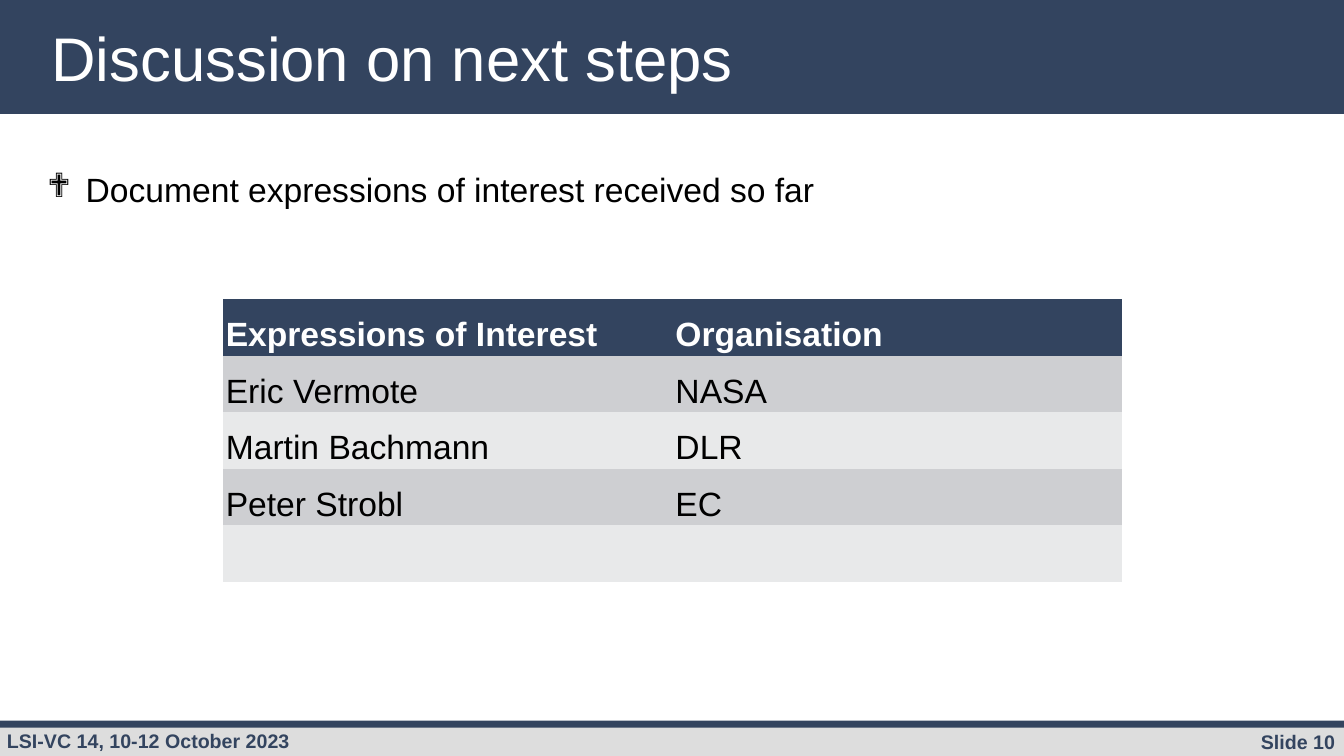
"""Build the slide listing expressions of interest."""
from dataclasses import dataclass

from lxml import etree
from pptx import Presentation
from pptx.dml.color import RGBColor as RGB
from pptx.enum.shapes import MSO_SHAPE as SHAPE
from pptx.enum.text import MSO_ANCHOR as ANCHOR, MSO_AUTO_SIZE as AUTO, PP_ALIGN as ALIGN
from pptx.oxml.ns import qn
from pptx.util import Inches, Pt


@dataclass(frozen=True)
class Theme:
    """Colours, font and type sizes of the slide."""
    font: str = "Arial"
    navy: str = "33445F"
    grey: str = "DDDDDD"
    white: str = "FFFFFF"
    black: str = "000000"
    bands: tuple = ("CECFD2", "E8E9EA")
    title: int = 44
    body: int = 24
    footer: int = 14


THEME = Theme()
NO_STYLE = "{2D5ABB26-0587-4C30-8999-92F81FD0307C}"
INTERESTS = [
    ("Expressions of Interest", "Organisation"),
    ("Eric Vermote", "NASA"),
    ("Martin Bachmann", "DLR"),
    ("Peter Strobl", "EC"),
    ("", ""),
]


def place(sp, left, top, width, height):
    """Move and size a shape in inches."""
    sp.left, sp.top = Inches(left), Inches(top)
    sp.width, sp.height = Inches(width), Inches(height)


def style(p, size, color, bold=False, align=ALIGN.LEFT):
    """Format a paragraph and its runs."""
    p.alignment = align
    for r in p.runs:
        r.font.name, r.font.size, r.font.bold = THEME.font, Pt(size), bold
        r.font.color.rgb = RGB.from_string(color)


def add_bar(s, top, height, color):
    """Add a full-width bar."""
    sp = s.shapes.add_shape(SHAPE.RECTANGLE, 0, Inches(top), Inches(13.33), Inches(height))
    sp.shadow.inherit = False
    sp.fill.solid()
    sp.fill.fore_color.rgb = RGB.from_string(color)
    sp.line.fill.background()


def add_footer(s, text, left, top, width, align):
    """Add a bold footer label."""
    sp = s.shapes.add_textbox(Inches(left), Inches(top), Inches(width), Inches(0.34))
    tf = sp.text_frame
    tf.word_wrap = True
    tf.text = text
    style(tf.paragraphs[0], THEME.footer, THEME.navy, True, align)


def fill_title(s, text):
    """Fill the title and bring it in front of the bars."""
    sp = s.shapes.title
    place(sp, 0.41, 0.19, 10.76, 0.85)
    tf = sp.text_frame
    tf.text = text
    tf.auto_size, tf.vertical_anchor = AUTO.NONE, ANCHOR.MIDDLE
    p = tf.paragraphs[0]
    p.line_spacing = 0.9
    style(p, THEME.title, THEME.white)
    sp._element.getparent().append(sp._element)


def fill_body(s, text):
    """Fill the body with one diamond-bulleted line."""
    sp = s.placeholders[1]
    place(sp, 0.37, 1.63, 7.88, 0.91)
    tf = sp.text_frame
    tf.text = text
    tf.auto_size, tf.vertical_anchor, tf.word_wrap = AUTO.NONE, ANCHOR.TOP, False
    p = tf.paragraphs[0]
    p.space_before = Pt(0)
    pPr = p._p.get_or_add_pPr()
    pPr.set("marL", str(Inches(0.38)))
    pPr.set("indent", str(Inches(-0.38)))
    etree.SubElement(pPr, qn("a:buFont")).set("typeface", "Wingdings")
    etree.SubElement(pPr, qn("a:buChar")).set("char", "❖")
    style(p, THEME.body, THEME.black)


def fill_cell(cell, text, fill, color, bold):
    """Fill and format one table cell."""
    cell.text = text
    cell.margin_left = cell.margin_right = Inches(0.03)
    cell.margin_top = cell.margin_bottom = Inches(0.02)
    cell.vertical_anchor = ANCHOR.BOTTOM
    cell.fill.solid()
    cell.fill.fore_color.rgb = RGB.from_string(fill)
    style(cell.text_frame.paragraphs[0], THEME.body, color, bold)


def add_interest_table(s, rows):
    """Add the table with a dark header and alternating bands."""
    frame = s.shapes.add_table(len(rows), len(rows[0]), Inches(2.21), Inches(2.97),
                               Inches(8.92), Inches(0.56 * len(rows)))
    table = frame.table
    table._tbl.tblPr.find(qn("a:tableStyleId")).text = NO_STYLE
    for i, row in enumerate(rows):
        header = i == 0
        fill = THEME.navy if header else THEME.bands[(i - 1) % 2]
        color = THEME.white if header else THEME.black
        for j, text in enumerate(row):
            fill_cell(table.cell(i, j), text, fill, color, header)


def main():
    """Build and save the slide."""
    prs = Presentation()
    prs.slide_width, prs.slide_height = Inches(13.33), Inches(7.5)
    s = prs.slides.add_slide(prs.slide_layouts[1])
    add_bar(s, 0, 1.13, THEME.navy)
    add_bar(s, 7.19, 0.31, THEME.grey)
    add_bar(s, 7.15, 0.07, THEME.navy)
    add_footer(s, "Slide 10", 11.23, 7.19, 2.11, ALIGN.RIGHT)
    add_footer(s, "LSI-VC 14, 10-12 October 2023", -0.03, 7.18, 5.39, ALIGN.LEFT)
    fill_title(s, "Discussion on next steps")
    fill_body(s, "Document expressions of interest received so far")
    add_interest_table(s, INTERESTS)
    prs.save("out.pptx")


if __name__ == "__main__":
    main()
